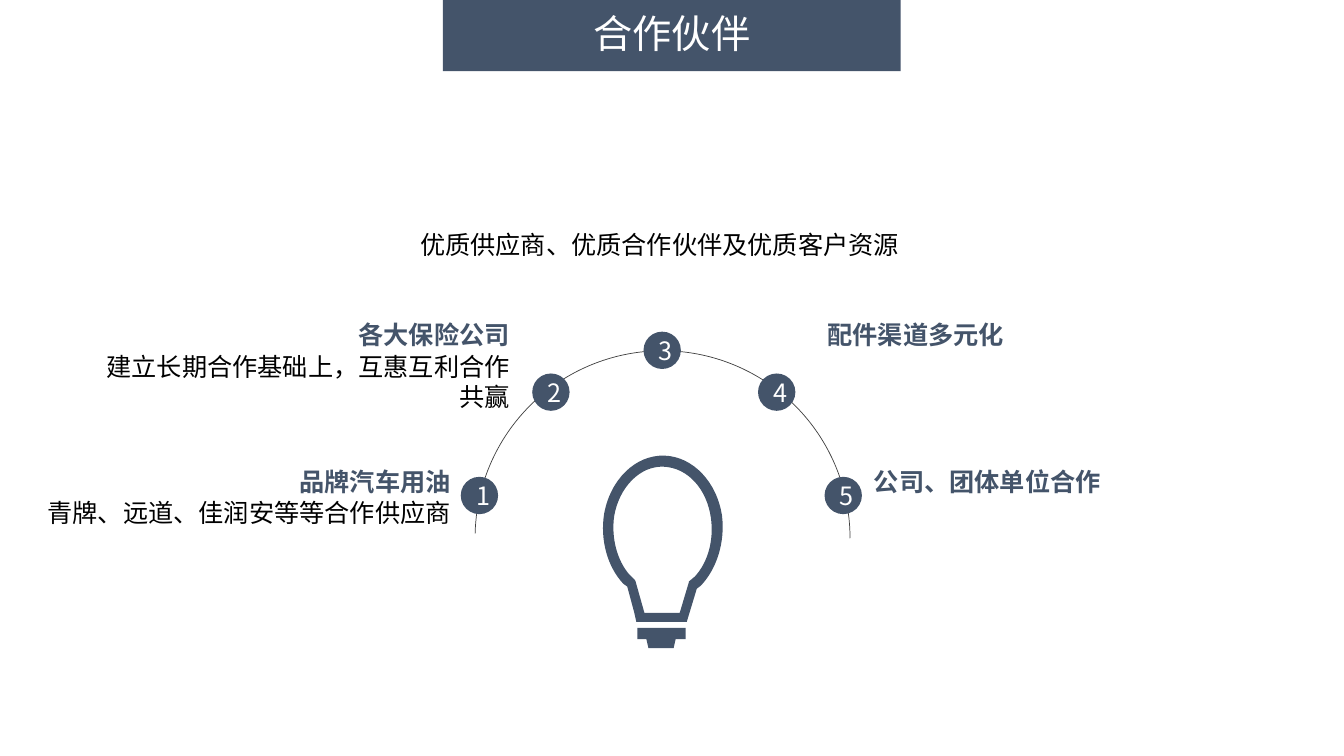
from pptx import Presentation, util as u
from pptx.dml.color import RGBColor
from pptx.enum import shapes, text
from pptx.oxml.ns import qn
from lxml import etree

FONT = "Noto Sans CJK SC"
SLATE, WHITE, BLACK, GREY = "44546A", "FFFFFF", "000000", "404040"
ALIGN = text.PP_ALIGN
ANCHOR = text.MSO_ANCHOR

deck = Presentation()
deck.slide_width, deck.slide_height = u.Inches(13.33), u.Inches(7.5)
COL, ROW = deck.slide_width / 100, deck.slide_height / 100
slide = deck.slides.add_slide(deck.slide_layouts[5])


def colour(value):
    return RGBColor.from_string(value)


def write(frame, words, size=18, ink=BLACK, bold=False, align=ALIGN.LEFT,
          anchor=ANCHOR.TOP, wrap=True, spacing=None):
    frame.word_wrap = wrap
    frame.vertical_anchor = anchor
    line = frame.paragraphs[0]
    line.alignment, line.line_spacing = align, spacing
    run = line.add_run()
    run.text = words
    run.font.size, run.font.bold = u.Pt(size), bold
    run.font.color.rgb = colour(ink)
    run.font.name = FONT
    etree.SubElement(run.font._element, qn("a:ea")).set("typeface", FONT)


# Heading on its bar
heading = slide.shapes.title
heading.left, heading.top = int(37.13 * COL), int(1.2 * ROW)
heading.width, heading.height = int(25.73 * COL), int(7.07 * ROW)
write(heading.text_frame, "合作伙伴", size=28, ink=WHITE, align=ALIGN.CENTER,
      anchor=ANCHOR.MIDDLE, wrap=False, spacing=0.9)
bar = slide.shapes.add_shape(shapes.MSO_SHAPE.RECTANGLE, int(32.95 * COL), 0,
                             int(34.07 * COL), int(9.4 * ROW))
bar.shadow.inherit = False
bar.fill.solid()
bar.fill.fore_color.rgb = colour(SLATE)
bar.line.fill.background()
heading._element.addprevious(bar._element)

# Arc that carries the numbers
arc = slide.shapes.add_shape(shapes.MSO_SHAPE.ARC, int(35.35 * COL), int(46.4 * ROW),
                             int(27.9 * COL), int(49.6 * ROW))
arc.adjustments[0], arc.adjustments[1] = 108.85, 0
arc.shadow.inherit = False
arc.fill.background()
arc.line.color.rgb = colour(GREY)
arc.line.width = u.Pt(0.5)

# Numbered dots
dots = [(34.28, 63.07), (39.6, 49.4), (47.88, 43.87), (56.4, 49.4), (61.35, 63.07)]
for number, (left, top) in enumerate(dots, 1):
    dot = slide.shapes.add_shape(shapes.MSO_SHAPE.OVAL, int(left * COL), int(top * ROW),
                                 int(2.78 * COL), int(2.78 * COL))
    dot.shadow.inherit = False
    dot.fill.solid()
    dot.fill.fore_color.rgb = colour(SLATE)
    dot.line.fill.background()
    write(dot.text_frame, str(number), ink=WHITE, align=ALIGN.CENTER, anchor=ANCHOR.MIDDLE)

# Partner labels: left, top, width, height, words, format
strong = {"ink": SLATE, "bold": True}
partners = [
    (2.4, 65.13, 31.88, 5.33, "青牌、远道、佳润安等等合作供应商", {"align": ALIGN.RIGHT}),
    (12.78, 61, 21.5, 5.33, "品牌汽车用油", {"align": ALIGN.RIGHT, **strong}),
    (6.78, 45.8, 31.88, 9.47, "建立长期合作基础上，互惠互利合作共赢", {"align": ALIGN.RIGHT}),
    (17.17, 41.6, 21.5, 5.33, "各大保险公司", {"align": ALIGN.RIGHT, **strong}),
    (27.73, 29.73, 42.68, 5.33, "优质供应商、优质合作伙伴及优质客户资源", {"align": ALIGN.CENTER}),
    (60.83, 41.6, 21.5, 5.33, "配件渠道多元化", strong),
    (64.28, 61, 21.5, 5.33, "公司、团体单位合作", strong),
]
for left, top, width, height, words, look in partners:
    label = slide.shapes.add_textbox(int(left * COL), int(top * ROW),
                                     int(width * COL), int(height * ROW))
    write(label.text_frame, words, **look)

# Light bulb on a fine grid: two numbers end a line, six a curve
base = [(33, 171), (81, 171), (81, 182), (71, 182), (69, 191), (44, 191), (42, 182), (33, 182)]
inner_glass = [(59, 11), (36, 10, 15, 31, 10, 60), (7, 82, 13, 104, 25, 118),
               (30, 123), (31, 124), (40, 156), (75, 156), (84, 126), (84, 125), (90, 120),
               (103, 106, 109, 84, 106, 62), (102, 33, 83, 12, 59, 11)]
outer_glass = [(60, 0), (88, 1, 112, 26, 117, 60), (120, 86, 112, 112, 96, 129),
               (92, 132), (82, 165), (32, 165), (30, 156), (23, 130), (19, 127),
               (3, 110, -4, 83, 0, 58), (6, 24, 31, -1, 60, 0)]
outlines = [base, inner_glass, outer_glass]
builder = slide.shapes.build_freeform(*base[0], scale=ROW * 100 / 750)
for outline in outlines:
    if outline is not base:
        builder.move_to(*outline[0])
    builder.add_line_segments([step[-2:] for step in outline[1:]], close=True)
bulb = builder.convert_to_shape(int(44.95 * COL), int(60.27 * ROW))
bulb.shadow.inherit = False
bulb.fill.solid()
bulb.fill.fore_color.rgb = colour(SLATE)
bulb.line.fill.background()

# Turn the rounded steps of the glass into curves
steps = [step for outline in outlines for step in outline[1:]]
for segment, step in zip(list(bulb._element.iter(qn("a:lnTo"))), steps):
    if len(step) == 6:
        segment.tag = qn("a:cubicBezTo")
        for place in (0, 1):
            handle = etree.Element(qn("a:pt"), x=str(step[2 * place]), y=str(step[2 * place + 1]))
            segment.insert(place, handle)

deck.save("out.pptx")
